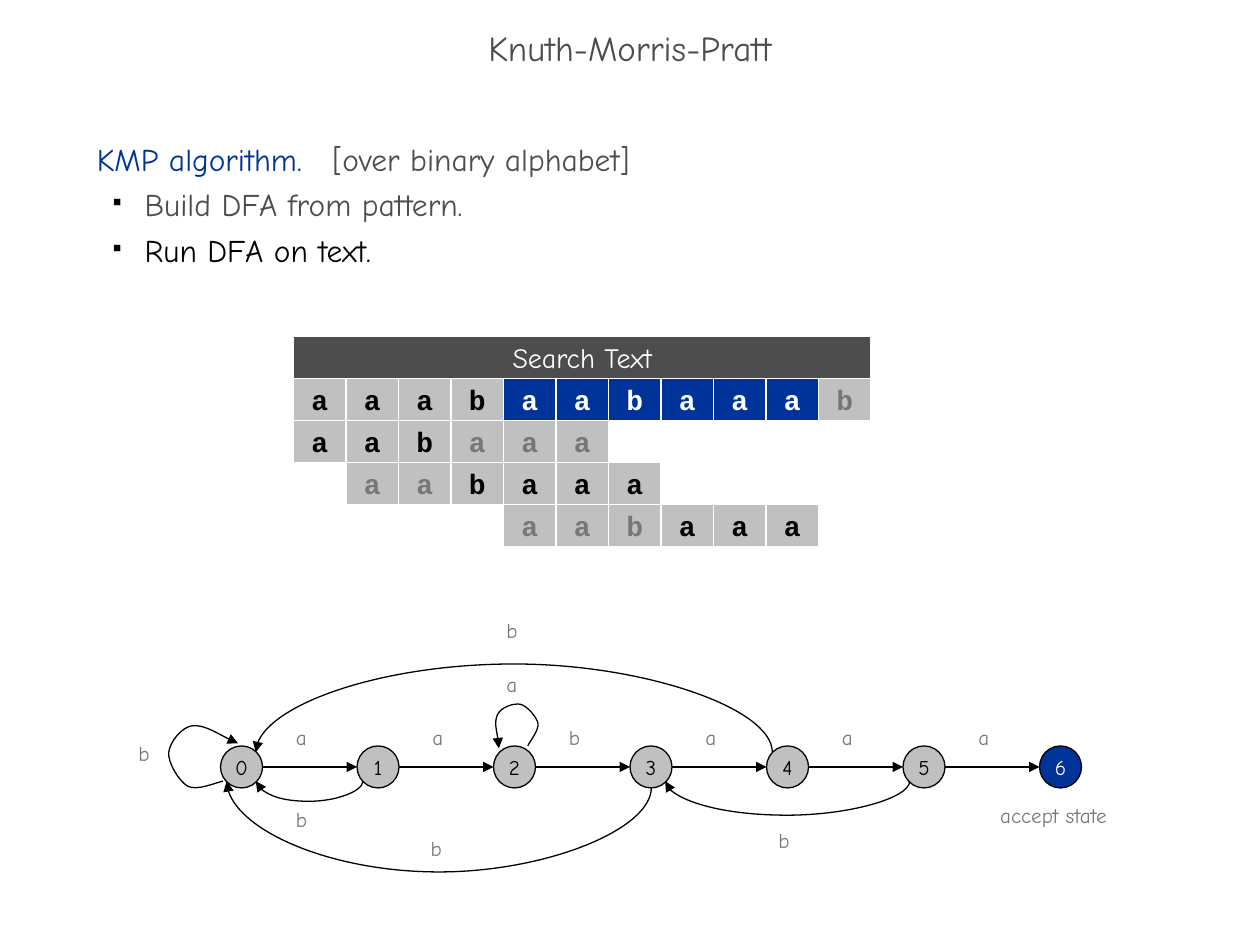
from lxml import etree
from pptx import Presentation
from pptx.dml.color import RGBColor
from pptx.enum.shapes import MSO_CONNECTOR, MSO_SHAPE
from pptx.enum.text import MSO_ANCHOR, PP_ALIGN
from pptx.oxml.ns import qn
from pptx.util import Inches, Pt

STRAIGHT = MSO_CONNECTOR.STRAIGHT
OVAL, RECT = MSO_SHAPE.OVAL, MSO_SHAPE.RECTANGLE
CENTER, LEFT = PP_ALIGN.CENTER, PP_ALIGN.LEFT
MIDDLE, TOP = MSO_ANCHOR.MIDDLE, MSO_ANCHOR.TOP

BLACK, WHITE, BLUE = "000000", "FFFFFF", "003399"
DARK, MID, LIGHT = "4D4D4D", "777777", "C0C0C0"
SANS, MONO = "Comic Neue", "Courier New"


def color(value):
    return RGBColor.from_string(value)


def add_xml(parent, tag, **attributes):
    return etree.SubElement(parent, qn(tag), attributes)


class SlideBuilder:
    """Keeps the shared style and the slide being filled."""

    def __init__(self, slide):
        self.shapes = slide.shapes

    def run(self, paragraph, text, size, ink, font=SANS, bold=False):
        run = paragraph.add_run()
        run.text = text
        run.font.size = Pt(size)
        run.font.name = font
        run.font.bold = bold
        run.font.color.rgb = color(ink)

    def text_box(self, x, y, w, h, anchor=TOP):
        box = self.shapes.add_textbox(Inches(x), Inches(y), Inches(w), Inches(h))
        frame = box.text_frame
        frame.word_wrap = True
        frame.vertical_anchor = anchor
        return frame

    def label(self, text, x, y, w=0.42):
        frame = self.text_box(x, y, w, 0.3)
        frame.paragraphs[0].alignment = LEFT
        self.run(frame.paragraphs[0], text, 12, MID)

    def bullet(self, frame, text, ink):
        paragraph = frame.add_paragraph()
        paragraph.level = 1
        paragraph.line_spacing = Pt(26)
        self.run(paragraph, text, 18, ink)
        props = paragraph._p.get_or_add_pPr()
        props.set("marL", str(Inches(0.38)))
        props.set("indent", str(Inches(-0.25)))
        add_xml(add_xml(props, "a:buClr"), "a:srgbClr", val=BLACK)
        add_xml(props, "a:buSzPct", val="35000")
        add_xml(props, "a:buChar", char="■")

    def block(self, kind, text, x, y, w, h, fill, line, size, ink, font=SANS, bold=False):
        shape = self.shapes.add_shape(kind, Inches(x), Inches(y), Inches(w), Inches(h))
        shape.shadow.inherit = False
        shape.fill.solid()
        shape.fill.fore_color.rgb = color(fill)
        shape.line.color.rgb = color(line)
        shape.line.width = Pt(0.75)
        frame = shape.text_frame
        frame.word_wrap = False
        frame.vertical_anchor = MIDDLE
        frame.paragraphs[0].alignment = CENTER
        self.run(frame.paragraphs[0], text, size, ink, font, bold)

    def arrow_line(self, shape):
        shape.line.color.rgb = color(BLACK)
        shape.line.width = Pt(0.75)
        add_xml(shape.line._get_or_add_ln(), "a:tailEnd", type="triangle")

    def arrow(self, x1, x2, y):
        edge = self.shapes.add_connector(STRAIGHT, Inches(x1), Inches(y), Inches(x2), Inches(y))
        self.arrow_line(edge)
        add_xml(edge._element.spPr, "a:effectLst")

    def curve(self, start, *points):
        """Cubic curve with an arrowhead: two controls and an end per segment."""
        builder = self.shapes.build_freeform(Inches(start[0]), Inches(start[1]))
        builder.add_line_segments([(Inches(x), Inches(y)) for x, y in points], close=False)
        shape = builder.convert_to_shape()
        shape.shadow.inherit = False
        shape.fill.background()
        steps = list(shape._element.iter(qn("a:lnTo")))
        for first in range(0, len(steps), 3):
            bezier = etree.Element(qn("a:cubicBezTo"))
            steps[first].addprevious(bezier)
            for step in steps[first:first + 3]:
                bezier.append(step[0])
                step.getparent().remove(step)
        self.arrow_line(shape)

    def arc(self, x1, y1, x2, y2, peak):
        """Arc that leaves and enters vertically and levels out at the peak."""
        span = x2 - x1
        middle = (x1 + x2) / 2
        self.curve((x1, y1),
                   (x1, (y1 + peak) / 2), (x1 + span / 4, peak), (middle, peak),
                   (x2 - span / 4, peak), (x2, (y2 + peak) / 2), (x2, y2))


def main():
    deck = Presentation()
    deck.slide_width, deck.slide_height = Inches(10), Inches(7.5)
    page = SlideBuilder(deck.slides.add_slide(deck.slide_layouts[6]))

    # Title
    title = page.text_box(0, 0.17, 10, 0.5, MIDDLE).paragraphs[0]
    title.alignment = CENTER
    title.line_spacing = 0.7
    page.run(title, "Knuth-Morris-Pratt", 20, DARK)

    # Steps of the algorithm
    body = page.text_box(0.67, 1, 8.58, 5.92)
    heading = body.paragraphs[0]
    heading.line_spacing = Pt(26)
    page.run(heading, "KMP algorithm.\t", 18, BLUE)
    page.run(heading, "[over binary alphabet]", 18, DARK)
    tabs = add_xml(heading._p.get_or_add_pPr(), "a:tabLst")
    add_xml(tabs, "a:tab", pos=str(Inches(1.87)), algn="l")
    page.bullet(body, "Build DFA from pattern.", DARK)
    page.bullet(body, "Run DFA on text.", BLACK)

    # Search text and pattern shifts: k compared, g not compared, f found
    cell_w, cell_h = 5 / 12, 1 / 3
    grid_x, grid_y = 2.33, 2.67
    cell_colors = {"k": (LIGHT, BLACK), "g": (LIGHT, MID), "f": (BLUE, WHITE)}
    rows = [
        (0, "aaabaabaaab", "kkkkffffffg"),
        (0, "aabaaa", "kkkggg"),
        (1, "aabaaa", "ggkkkk"),
        (4, "aabaaa", "gggkkk"),
    ]
    page.block(RECT, "Search Text", grid_x, grid_y, 11 * cell_w, cell_h, DARK, WHITE, 16, WHITE)
    for row, (shift, letters, marks) in enumerate(rows, start=1):
        for column, (letter, mark) in enumerate(zip(letters, marks), start=shift):
            fill, ink = cell_colors[mark]
            page.block(RECT, letter, grid_x + column * cell_w, grid_y + row * cell_h,
                       cell_w, cell_h, fill, WHITE, 16, ink, MONO, True)

    # Automaton: states and matching transitions
    state_x, state_y, state_size, state_step = 1.75, 5.92, 1 / 3, 13 / 12
    pattern = "aabaaa"
    accept = len(pattern)
    for state in range(accept + 1):
        x = state_x + state * state_step
        fill, ink = (BLUE, WHITE) if state == accept else (LIGHT, BLACK)
        page.block(OVAL, str(state), x, state_y, state_size, state_size, fill, BLACK, 12, ink)
        if state < accept:
            page.arrow(x + state_size, x + state_step, state_y + state_size / 2)
            page.label(pattern[state], x + 0.5, 5.7)
    page.label("accept state", 7.84, 6.32, 1.33)

    # Mismatch transitions back to earlier states
    page.arc(2.88, 6.2, 2.03, 6.2, 6.36)
    page.arc(7.22, 6.2, 5.28, 6.2, 6.47)
    page.arc(6.13, 5.97, 2.03, 5.97, 5.27)
    page.arc(5.17, 6.25, 1.8, 6.2, 6.92)
    for x, y in [(2.25, 6.35), (6.08, 6.52), (3.92, 4.85), (3.32, 6.58), (1, 5.83)]:
        page.label("b", x, y)

    # Self-loops on states 0 and 2
    page.curve((1.77, 6.2),
               (1.72, 6.21), (1.56, 6.28), (1.49, 6.24),
               (1.42, 6.2), (1.33, 6.05), (1.34, 5.97),
               (1.35, 5.89), (1.44, 5.77), (1.53, 5.76),
               (1.62, 5.75), (1.81, 5.87), (1.89, 5.9))
    page.curve((4.19, 5.92),
               (4.2, 5.89), (4.28, 5.8), (4.27, 5.74),
               (4.26, 5.69), (4.18, 5.6), (4.13, 5.59),
               (4.08, 5.58), (3.98, 5.61), (3.95, 5.67),
               (3.92, 5.73), (3.96, 5.88), (3.96, 5.94))
    page.label("a", 3.92, 5.28)

    deck.save("out.pptx")


if __name__ == "__main__":
    main()
